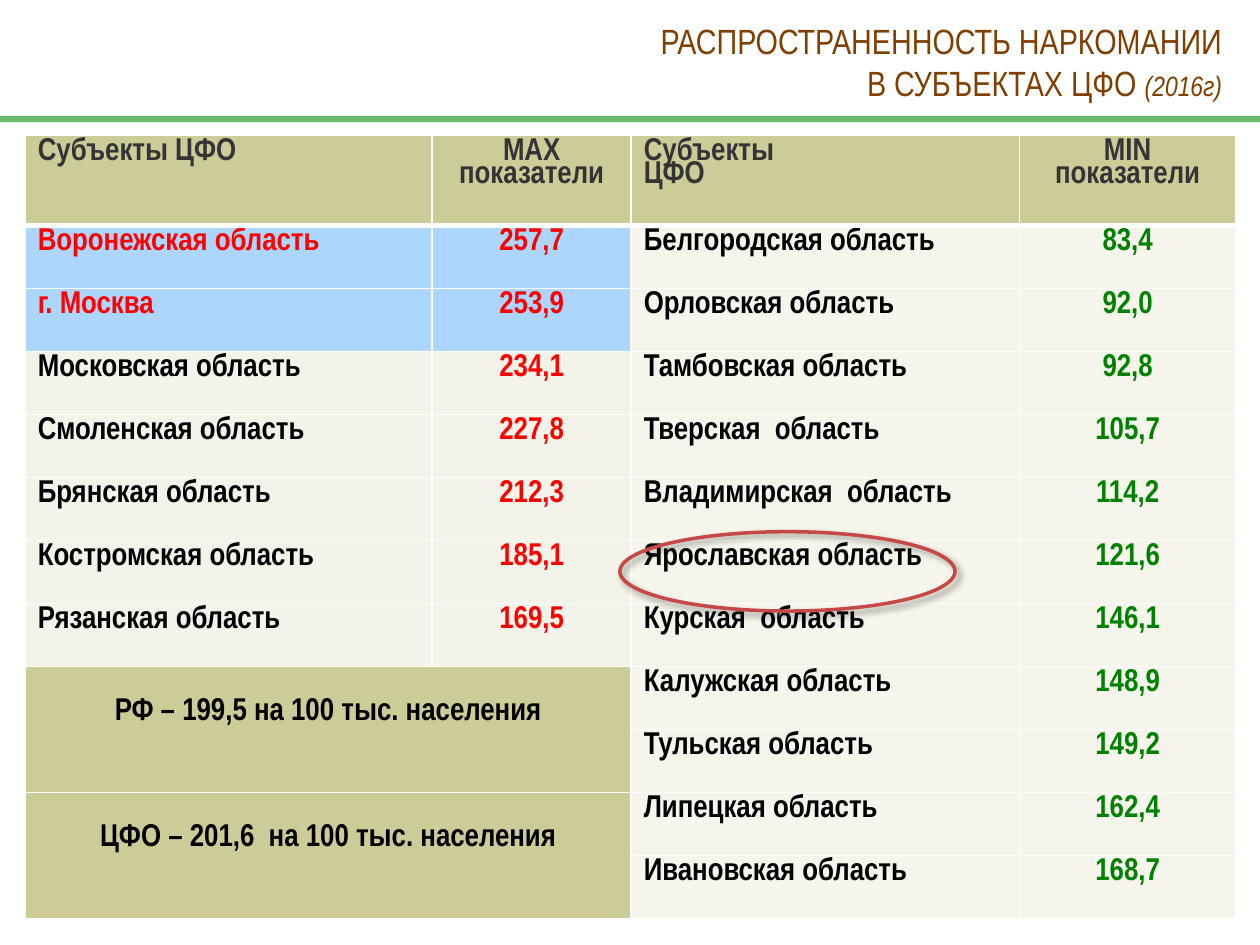
from lxml.etree import SubElement
from pptx import Presentation
from pptx.dml.color import RGBColor
from pptx.enum.shapes import MSO_SHAPE
from pptx.enum.text import MSO_ANCHOR, MSO_AUTO_SIZE, PP_ALIGN
from pptx.oxml.ns import qn
from pptx.util import Inches, Pt

FONT = "Arial Narrow"
WHITE, BLACK, RED, GREEN = "FFFFFF", "000000", "FF0000", "008000"
OLIVE, BLUE, LEFT_FILL, RIGHT_FILL = "CCCC99", "ADD6FF", "F3F3EA", "F5F5EB"
HEADER_COLOR = "343437"

COLUMN_WIDTHS = [3.23, 1.58, 3.08, 1.72]
HEADER_HEIGHT, ROW_HEIGHT = 0.72, 0.5
HEADERS = ["Субъекты ЦФО", "MAX\nпоказатели", "Субъекты\nЦФО", "MIN\nпоказатели"]
MAXIMUMS = [
    ("Воронежская область", "257,7"),
    ("г. Москва", "253,9"),
    ("Московская область", "234,1"),
    ("Смоленская область", "227,8"),
    ("Брянская область", "212,3"),
    ("Костромская область", "185,1"),
    ("Рязанская область", "169,5"),
]
MINIMUMS = [
    ("Белгородская область", "83,4"),
    ("Орловская область", "92,0"),
    ("Тамбовская область", "92,8"),
    ("Тверская  область", "105,7"),
    ("Владимирская  область", "114,2"),
    ("Ярославская область", "121,6"),
    ("Курская  область", "146,1"),
    ("Калужская область", "148,9"),
    ("Тульская область", "149,2"),
    ("Липецкая область", "162,4"),
    ("Ивановская область", "168,7"),
]
TOTALS = ["РФ – 199,5 на 100 тыс. населения", "ЦФО – 201,6  на 100 тыс. населения"]
HIGHLIGHTED_ROWS = 2


def color(value):
    return RGBColor.from_string(value)


def set_fill(target, value):
    target.fill.solid()
    target.fill.fore_color.rgb = color(value)


def set_borders(cell, row):
    properties = cell._tc.get_or_add_tcPr()
    widths = {"a:lnL": 1, "a:lnR": 1, "a:lnT": 3 if row == 1 else 1, "a:lnB": 3 if row == 0 else 1}
    for index, (tag, width) in enumerate(widths.items()):
        line = SubElement(properties, qn(tag), w=str(Pt(width)))
        properties.insert(index, line)
        SubElement(SubElement(line, qn("a:solidFill")), qn("a:srgbClr"), val=WHITE)


def write_cell(cell, text, text_color, fill, centered):
    set_fill(cell, fill)
    cell.text = text
    for paragraph in cell.text_frame.paragraphs:
        paragraph.alignment = PP_ALIGN.CENTER if centered else PP_ALIGN.LEFT
        paragraph.line_spacing = 0.8
        paragraph.font.name = FONT
        paragraph.font.size = Pt(18)
        paragraph.font.bold = True
        paragraph.font.color.rgb = color(text_color)


def add_rates_table(slide):
    row_count = len(MINIMUMS) + 1
    height = HEADER_HEIGHT + ROW_HEIGHT * len(MINIMUMS)
    table = slide.shapes.add_table(
        row_count, 4, Inches(0.2), Inches(1.07), Inches(sum(COLUMN_WIDTHS)), Inches(height)
    ).table
    for column, width in zip(table.columns, COLUMN_WIDTHS):
        column.width = Inches(width)
    for index, row in enumerate(table.rows):
        row.height = Inches(ROW_HEIGHT if index else HEADER_HEIGHT)

    for column, header in enumerate(HEADERS):
        write_cell(table.cell(0, column), header, HEADER_COLOR, OLIVE, column % 2 == 1)
    for row, (region, rate) in enumerate(MAXIMUMS, 1):
        highlighted = row <= HIGHLIGHTED_ROWS
        fill = BLUE if highlighted else LEFT_FILL
        write_cell(table.cell(row, 0), region, RED if highlighted else BLACK, fill, False)
        write_cell(table.cell(row, 1), rate, RED, fill, True)
    for row, (region, rate) in enumerate(MINIMUMS, 1):
        write_cell(table.cell(row, 2), region, BLACK, RIGHT_FILL, False)
        write_cell(table.cell(row, 3), rate, GREEN, RIGHT_FILL, True)
    for index, total in enumerate(TOTALS):
        row = len(MAXIMUMS) + 1 + 2 * index
        cell = table.cell(row, 0)
        cell.merge(table.cell(row + 1, 1))
        cell.margin_top = Inches(0.28)
        write_cell(cell, total, BLACK, OLIVE, True)
    for row in range(row_count):
        for column in range(4):
            set_borders(table.cell(row, column), row)


def add_title(slide):
    title = slide.shapes.title
    title.left, title.top = Inches(0.7), Inches(0.05)
    title.width, title.height = Inches(9.1), Inches(0.87)
    set_fill(title, WHITE)
    frame = title.text_frame
    frame.auto_size = MSO_AUTO_SIZE.NONE
    frame.word_wrap = True
    frame.vertical_anchor = MSO_ANCHOR.MIDDLE
    frame.text = "РАСПРОСТРАНЕННОСТЬ НАРКОМАНИИ\nВ СУБЪЕКТАХ ЦФО "
    for paragraph in frame.paragraphs:
        paragraph.alignment = PP_ALIGN.RIGHT
        paragraph.font.name = FONT
        paragraph.font.size = Pt(20)
        paragraph.font.color.rgb = color("7E3F00")
    year = frame.paragraphs[-1].add_run()
    year.text = "(2016г)"
    year.font.size = Pt(16)
    year.font.italic = True


def add_highlight_ellipse(slide):
    ellipse = slide.shapes.add_shape(
        MSO_SHAPE.OVAL, Inches(4.92), Inches(4.22), Inches(2.66), Inches(0.63)
    )
    ellipse.fill.background()
    ellipse.line.color.rgb = color("C64847")
    ellipse.line.width = Pt(2)
    ellipse.shadow.inherit = False
    effects = ellipse._element.spPr.find(qn("a:effectLst"))
    shadow = SubElement(
        effects, qn("a:outerShdw"), blurRad=str(Pt(4)), dist=str(Pt(3)), dir=str(45 * 60000)
    )
    shadow_color = SubElement(shadow, qn("a:srgbClr"), val=BLACK)
    SubElement(shadow_color, qn("a:alpha"), val="40000")


def add_divider(slide):
    divider = slide.shapes.add_shape(
        MSO_SHAPE.RECTANGLE, Inches(0), Inches(0.92), Inches(10), Inches(0.05)
    )
    divider.shadow.inherit = False
    set_fill(divider, "6BB76D")
    divider.line.fill.background()


def main():
    presentation = Presentation()
    presentation.slide_width = Inches(10)
    presentation.slide_height = Inches(7.5)
    slide = presentation.slides.add_slide(presentation.slide_layouts[5])
    add_title(slide)
    add_rates_table(slide)
    add_highlight_ellipse(slide)
    add_divider(slide)
    presentation.save("out.pptx")


if __name__ == "__main__":
    main()
